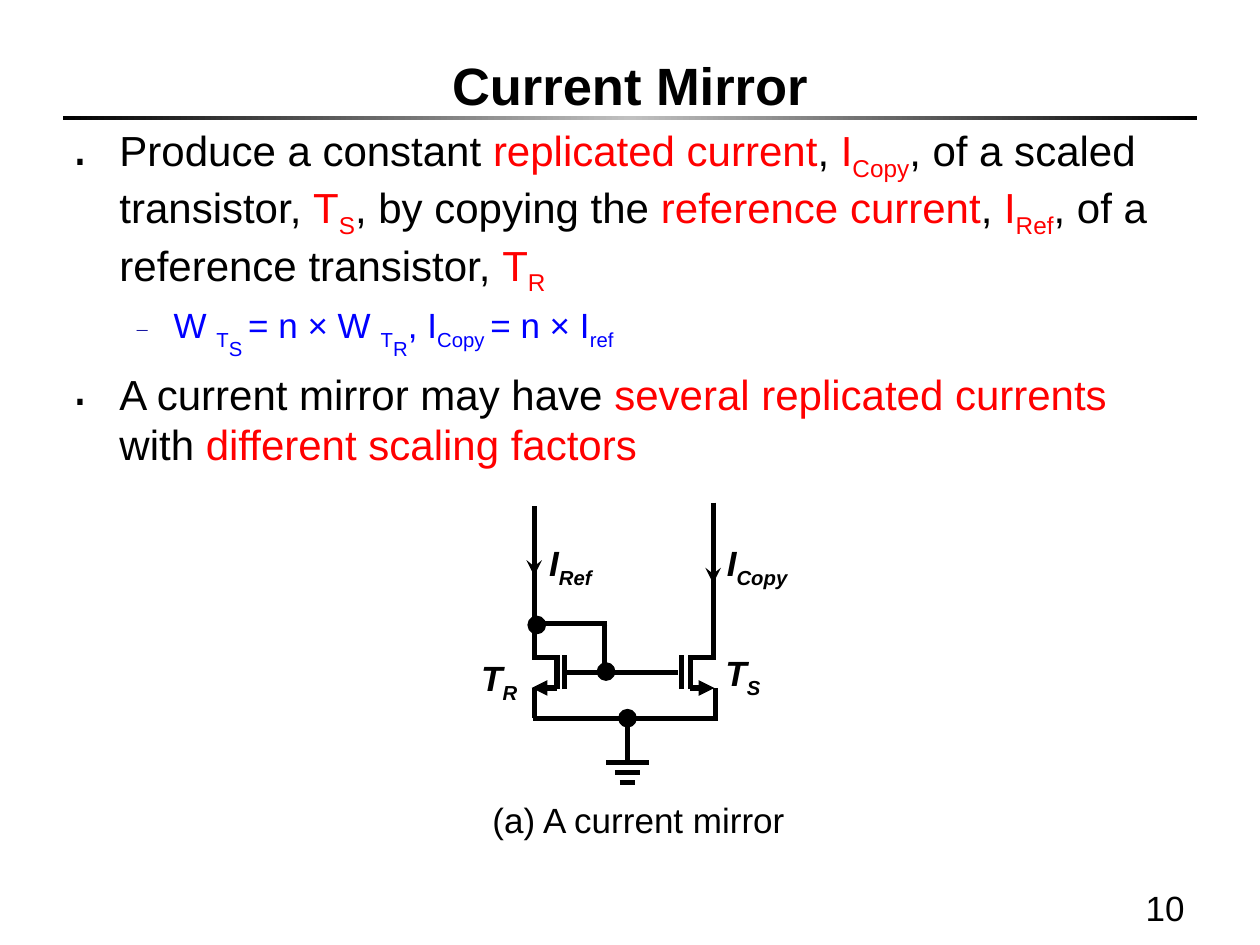
import copy
from dataclasses import dataclass

import pptx
import pptx.dml.color
import pptx.enum.shapes
import pptx.enum.text
import pptx.oxml.ns
import pptx.util
from lxml import etree
from pptx.util import Inches

ALIGN = pptx.enum.text.PP_ALIGN
ANCHOR = pptx.enum.text.MSO_ANCHOR
SHAPE = pptx.enum.shapes.MSO_SHAPE
qn = pptx.oxml.ns.qn


@dataclass(frozen=True)
class Theme:
    font: str = "Arial"
    ink: str = "000000"
    accent: str = "FF0000"
    formula: str = "0000FF"
    dash: str = "000099"
    silver: str = "C0C0C0"
    title: int = 30
    body: int = 24
    label: int = 20
    wire: int = 3
    node: int = 2


def rgb(color):
    return pptx.dml.color.RGBColor.from_string(color)


def add_xml(parent, tag, **attributes):
    return etree.SubElement(parent, qn(tag), attributes)


class SlideBuilder:
    def __init__(self, slide, theme):
        self.slide = slide
        self.theme = theme

    def text_frame(self, left, top, width, height, anchor=ANCHOR.TOP, wrap=True):
        box = self.slide.shapes.add_textbox(
            Inches(left), Inches(top), Inches(width), Inches(height))
        frame = box.text_frame
        frame.word_wrap = wrap
        frame.vertical_anchor = anchor
        return frame

    def add_runs(self, paragraph, runs, size, bold=False, italic=False):
        """Each run is (text, color, baseline shift in percent)."""
        for text, color, shift in runs:
            run = paragraph.add_run()
            run.text = text
            font = run.font
            font.name, font.size = self.theme.font, pptx.util.Pt(size)
            font.bold, font.italic = bold, italic
            font.color.rgb = rgb(color)
            if shift:
                run._r.get_or_add_rPr().set("baseline", str(shift * 1000))

    def line_of_text(self, text, at, size, align=ALIGN.LEFT, bold=False, **frame_options):
        paragraph = self.text_frame(*at, **frame_options).paragraphs[0]
        paragraph.alignment = align
        self.add_runs(paragraph, [(text, self.theme.ink, 0)], size, bold)

    def bullet(self, paragraph, runs, size, char, color, percent, margin, hanging):
        paragraph.space_before = pptx.util.Pt(size * 0.2)
        properties = paragraph._p.get_or_add_pPr()
        properties.set("marL", str(Inches(margin)))
        properties.set("indent", str(-Inches(hanging)))
        add_xml(add_xml(properties, "a:buClr"), "a:srgbClr", val=color)
        add_xml(properties, "a:buSzPct", val=str(percent * 1000))
        add_xml(properties, "a:buChar", char=char)
        self.add_runs(paragraph, runs, size)

    def gradient_rule(self, left, top, width, height):
        rule = self.slide.shapes.add_shape(
            SHAPE.RECTANGLE, Inches(left), Inches(top), Inches(width), Inches(height))
        rule.shadow.inherit = False
        rule.line.fill.background()
        rule.fill.gradient()
        rule.fill.gradient_angle = 0
        stops = rule._element.spPr.find(qn("a:gradFill")).find(qn("a:gsLst"))
        stops.insert(1, copy.deepcopy(stops[0]))
        colors = (self.theme.ink, self.theme.silver, self.theme.ink)
        for stop, color, position in zip(rule.fill.gradient_stops, colors, (0, 0.5, 1)):
            stop.color.rgb = rgb(color)
            stop.position = position

    def wire(self, x1, y1, x2, y2, head=None):
        wire = self.slide.shapes.add_connector(
            pptx.enum.shapes.MSO_CONNECTOR.STRAIGHT,
            Inches(x1), Inches(y1), Inches(x2), Inches(y2))
        wire.line.color.rgb = rgb(self.theme.ink)
        wire.line.width = pptx.util.Pt(self.theme.wire)
        if head:
            add_xml(wire.line._get_or_add_ln(), "a:headEnd", type=head)
        add_xml(wire._element.spPr, "a:effectLst")

    def node(self, left, top, diameter=0.12):
        node = self.slide.shapes.add_shape(
            SHAPE.OVAL, Inches(left), Inches(top), Inches(diameter), Inches(diameter))
        node.shadow.inherit = False
        node.fill.solid()
        node.fill.fore_color.rgb = node.line.color.rgb = rgb(self.theme.ink)
        node.line.width = pptx.util.Pt(self.theme.node)

    def symbol(self, letter, subscript, left, top, width):
        frame = self.text_frame(left, top, width, 0.44, wrap=False)
        runs = [(letter, self.theme.ink, 0), (subscript, self.theme.ink, -25)]
        self.add_runs(frame.paragraphs[0], runs, self.theme.label, bold=True, italic=True)


def add_bullets(builder):
    theme = builder.theme
    ink, red, blue = theme.ink, theme.accent, theme.formula
    definition = [
        ("Produce a constant ", ink, 0), ("replicated current", red, 0), (", ", ink, 0),
        ("I", red, 0), ("Copy", red, -25), (", of a scaled transistor, ", ink, 0),
        ("T", red, 0), ("S", red, -25), (", by copying the ", ink, 0),
        ("reference current", red, 0), (", ", ink, 0), ("I", red, 0), ("Ref", red, -25),
        (", of a reference transistor, ", ink, 0), ("T", red, 0), ("R", red, -25)]
    scaling = [(text, blue, shift) for text, shift in (
        ("W ", 0), ("T", -25), ("S ", -50), ("= n × W ", 0), ("T", -25), ("R", -50),
        (", I", 0), ("Copy ", -25), ("= n × I", 0), ("ref", -25))]
    several = [
        ("A current mirror may have ", ink, 0), ("several replicated currents ", red, 0),
        ("with ", ink, 0), ("different scaling factors", red, 0)]

    main_style = (theme.body, "․", ink, 120, 0.38, 0.38)
    sub_style = (theme.label, "─", theme.dash, 55, 0.81, 0.31)
    frame = builder.text_frame(0.47, 0.94, 9.06, 2.27)
    builder.bullet(frame.paragraphs[0], definition, *main_style)
    sub_point = frame.add_paragraph()
    sub_point.level = 1
    builder.bullet(sub_point, scaling, *sub_style)
    builder.bullet(frame.add_paragraph(), several, *main_style)


def add_circuit(builder):
    # Transistors: drain, source arrow, channel and gate plates
    for outer, channel, gate in ((4.22, 4.42, 4.48), (5.67, 5.48, 5.41)):
        builder.wire(channel, 5.22, outer, 5.22)
        builder.wire(outer, 5.46, channel, 5.46, head="triangle")
        for plate in (channel, gate):
            builder.wire(plate, 5.47, plate, 5.2)

    # Current branches with direction arrows
    for x, top, bottom, tip in ((4.24, 4.02, 5.22, 4.57), (5.66, 3.99, 5.24, 4.63)):
        builder.wire(x, top, x, bottom)
        builder.wire(x, tip, x, 4.37, head="stealth")

    # Gate link, diode connection and common source rail
    builder.wire(5.38, 5.34, 4.48, 5.34)
    builder.wire(4.8, 5.34, 4.8, 4.95)
    builder.wire(4.82, 4.95, 4.23, 4.95)
    builder.wire(5.7, 5.7, 4.23, 5.7)
    for x in (4.24, 5.68):
        builder.wire(x, 5.7, x, 5.46)

    # Ground
    ground_x = 4.98
    builder.wire(ground_x, 6.05, ground_x, 5.7)
    for step, half_width in enumerate((0.17, 0.1, 0.06)):
        y = 6.05 + 0.08 * step
        builder.wire(ground_x - half_width, y, ground_x + half_width, y)

    # Junctions
    for left, top in ((4.75, 5.27), (4.2, 4.9), (4.92, 5.64)):
        builder.node(left, top)

    # Labels and caption
    builder.symbol("T", "R", 3.72, 5.16, 0.51)
    builder.symbol("T", "S", 5.66, 5.12, 0.5)
    builder.symbol("I", "Ref", 4.26, 4.25, 0.58)
    builder.symbol("I", "Copy", 5.67, 4.25, 0.75)
    builder.line_of_text("(a) A current mirror", (3.81, 6.29, 2.53, 0.44),
                         builder.theme.label, wrap=False)


def main():
    deck = pptx.Presentation()
    deck.slide_width, deck.slide_height = Inches(10), Inches(7.5)
    theme = Theme()
    builder = SlideBuilder(deck.slides.add_slide(deck.slide_layouts[6]), theme)

    # Title, rule and page number
    builder.gradient_rule(0.5, 0.92, 9, 0.03)
    builder.line_of_text("Current Mirror", (0.51, 0.05, 8.98, 0.92), theme.title,
                         ALIGN.CENTER, bold=True, anchor=ANCHOR.BOTTOM)
    builder.line_of_text("10", (7.42, 6.92, 2.08, 0.5), theme.label,
                         ALIGN.RIGHT, anchor=ANCHOR.BOTTOM)

    add_bullets(builder)
    add_circuit(builder)
    deck.save("out.pptx")


if __name__ == "__main__":
    main()
